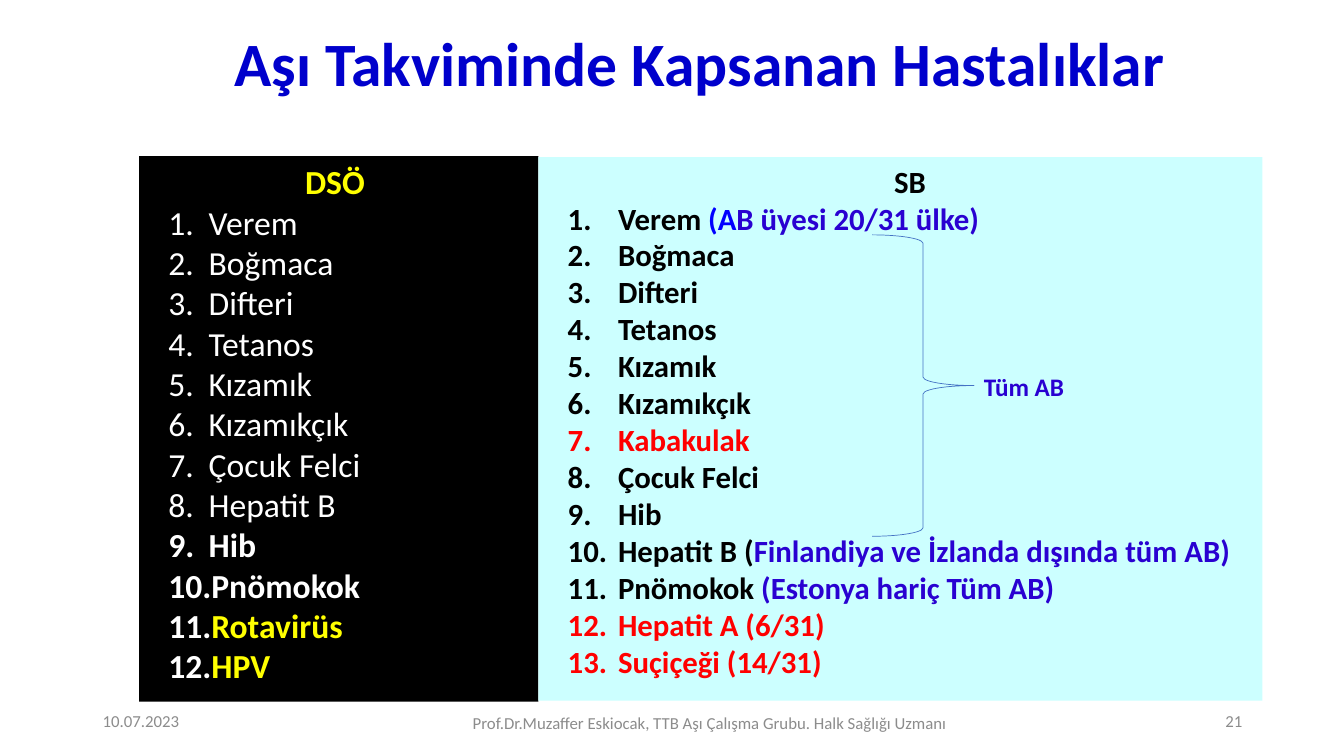
from dataclasses import dataclass

from pptx import Presentation
from pptx.dml.color import RGBColor
from pptx.enum.shapes import MSO_SHAPE
from pptx.enum.text import MSO_ANCHOR, MSO_AUTO_SIZE, PP_ALIGN
from pptx.oxml.ns import qn
from pptx.util import Inches, Pt
from lxml.etree import SubElement


@dataclass(frozen=True)
class Theme:
    font: str = "Calibri"
    title: str = "0000CC"
    black: str = "000000"
    white: str = "FFFFFF"
    yellow: str = "FFFF00"
    red: str = "FF0000"
    blue: str = "0000FF"
    violet: str = "2901D1"
    cyan: str = "CCFFFF"
    gray: str = "8C8C8C"
    brace: str = "4472C4"
    title_size: int = 44
    left_size: int = 24
    right_size: int = 22
    label_size: int = 18
    footer_size: int = 12


THEME = Theme()

WHO_DISEASES = [
    *[[(name, THEME.white, False)] for name in (
        "Verem", "Boğmaca", "Difteri", "Tetanos", "Kızamık",
        "Kızamıkçık", "Çocuk Felci", "Hepatit B")],
    *[[(name, THEME.white, True)] for name in ("Hib", "Pnömokok")],
    *[[(name, THEME.yellow, True)] for name in ("Rotavirüs", "HPV")],
]

MINISTRY_DISEASES = [
    [("Verem ", THEME.black, True), ("(A", THEME.blue, True),
     ("B üyesi 20/31 ülke)", THEME.violet, True)],
    *[[(name, THEME.black, True)] for name in (
        "Boğmaca", "Difteri", "Tetanos", "Kızamık", "Kızamıkçık")],
    [("Kabakulak", THEME.red, True)],
    *[[(name, THEME.black, True)] for name in ("Çocuk Felci", "Hib")],
    [("Hepatit B (", THEME.black, True),
     ("Finlandiya ve İzlanda dışında tüm AB)", THEME.violet, True)],
    [("Pnömokok ", THEME.black, True),
     ("(Estonya hariç Tüm AB)", THEME.violet, True)],
    *[[(name, THEME.red, True)] for name in (
        "Hepatit A (6/31)", "Suçiçeği (14/31)")],
]


def place(shape, left, top, width, height):
    shape.left, shape.top = Inches(left), Inches(top)
    shape.width, shape.height = Inches(width), Inches(height)


def add_span(para, text, *, size, color, bold=False):
    span = para.add_run()
    span.text = text
    span.font.name = THEME.font
    span.font.size = Pt(size)
    span.font.bold = bold
    span.font.color.rgb = RGBColor.from_string(color)


def format_para(para, *, align=PP_ALIGN.LEFT, spacing=1.0):
    para.alignment = align
    para.line_spacing = spacing
    para.space_before = para.space_after = Pt(0)


def set_indent(para, margin, hanging, *, numbered, number_color=None):
    properties = para._p.get_or_add_pPr()
    properties.set("marL", str(Inches(margin)))
    properties.set("indent", str(-Inches(hanging)))
    if not numbered:
        SubElement(properties, qn("a:buNone"))
        return
    if number_color:
        color = SubElement(properties, qn("a:buClr"))
        SubElement(color, qn("a:srgbClr"), val=number_color)
    SubElement(properties, qn("a:buFont"), typeface="+mj-lt")
    SubElement(properties, qn("a:buAutoNum"), type="arabicPeriod")


def fill_title(title, text):
    place(title, 1.38, 0, 11.13, 1.32)
    frame = title.text_frame
    frame.auto_size = MSO_AUTO_SIZE.NONE
    frame.vertical_anchor = MSO_ANCHOR.MIDDLE
    para = frame.paragraphs[0]
    format_para(para, align=PP_ALIGN.CENTER, spacing=0.9)
    add_span(para, text, size=THEME.title_size, color=THEME.title, bold=True)


def fill_list(body, area, heading, items, *, fill, heading_color, size,
              heading_margin, margin, hanging, number_color=None):
    place(body, *area)
    body.fill.solid()
    body.fill.fore_color.rgb = RGBColor.from_string(fill)
    frame = body.text_frame
    frame.auto_size = MSO_AUTO_SIZE.NONE
    frame.vertical_anchor = MSO_ANCHOR.TOP
    para = frame.paragraphs[0]
    format_para(para, align=PP_ALIGN.CENTER)
    set_indent(para, heading_margin, 0.5, numbered=False)
    add_span(para, heading, size=size, color=heading_color, bold=True)
    for spans in items:
        para = frame.add_paragraph()
        format_para(para)
        set_indent(para, margin, hanging, numbered=True, number_color=number_color)
        for text, color, bold in spans:
            add_span(para, text, size=size, color=color, bold=bold)


def add_text(page, area, text, *, align=PP_ALIGN.LEFT, anchor=MSO_ANCHOR.MIDDLE,
             wrap=True, **style):
    box = page.shapes.add_textbox(*map(Inches, area))
    frame = box.text_frame
    frame.word_wrap = wrap
    frame.vertical_anchor = anchor
    para = frame.paragraphs[0]
    format_para(para, align=align)
    add_span(para, text, **style)


def add_brace(page, area):
    brace = page.shapes.add_shape(MSO_SHAPE.RIGHT_BRACE, *map(Inches, area))
    brace.shadow.inherit = False
    brace.fill.background()
    brace.line.color.rgb = RGBColor.from_string(THEME.brace)
    brace.line.width = Pt(0.5)


def main():
    deck = Presentation()
    deck.slide_width, deck.slide_height = Inches(13.33), Inches(7.5)
    page = deck.slides.add_slide(deck.slide_layouts.get_by_name("Two Content"))
    title, left_body, right_body = page.placeholders

    fill_title(title, "Aşı Takviminde Kapsanan Hastalıklar")
    fill_list(left_body, (1.38, 1.55, 3.96, 5.41), "DSÖ ", WHO_DISEASES,
              fill=THEME.black, heading_color=THEME.yellow, size=THEME.left_size,
              heading_margin=0.5, margin=0.59, hanging=0.4,
              number_color=THEME.white)
    fill_list(right_body, (5.34, 1.56, 7.18, 5.39), "SB", MINISTRY_DISEASES,
              fill=THEME.cyan, heading_color=THEME.black, size=THEME.right_size,
              heading_margin=0.69, margin=0.69, hanging=0.5)

    footer = {"size": THEME.footer_size, "color": THEME.gray}
    add_text(page, (4.42, 6.95, 5.24, 0.44),
             "Prof.Dr.Muzaffer Eskiocak, TTB Aşı Çalışma Grubu. Halk Sağlığı Uzmanı",
             align=PP_ALIGN.CENTER, **footer)
    add_text(page, (9.42, 6.95, 3, 0.4), "21", align=PP_ALIGN.RIGHT, **footer)
    add_text(page, (0.92, 6.95, 3, 0.4), "10.07.2023", **footer)

    add_brace(page, (8.65, 2.33, 1.01, 2.99))
    add_text(page, (9.66, 3.63, 1.01, 0.34), "Tüm AB", anchor=MSO_ANCHOR.TOP,
             wrap=False, size=THEME.label_size, color=THEME.violet, bold=True)

    deck.save("out.pptx")


if __name__ == "__main__":
    main()
